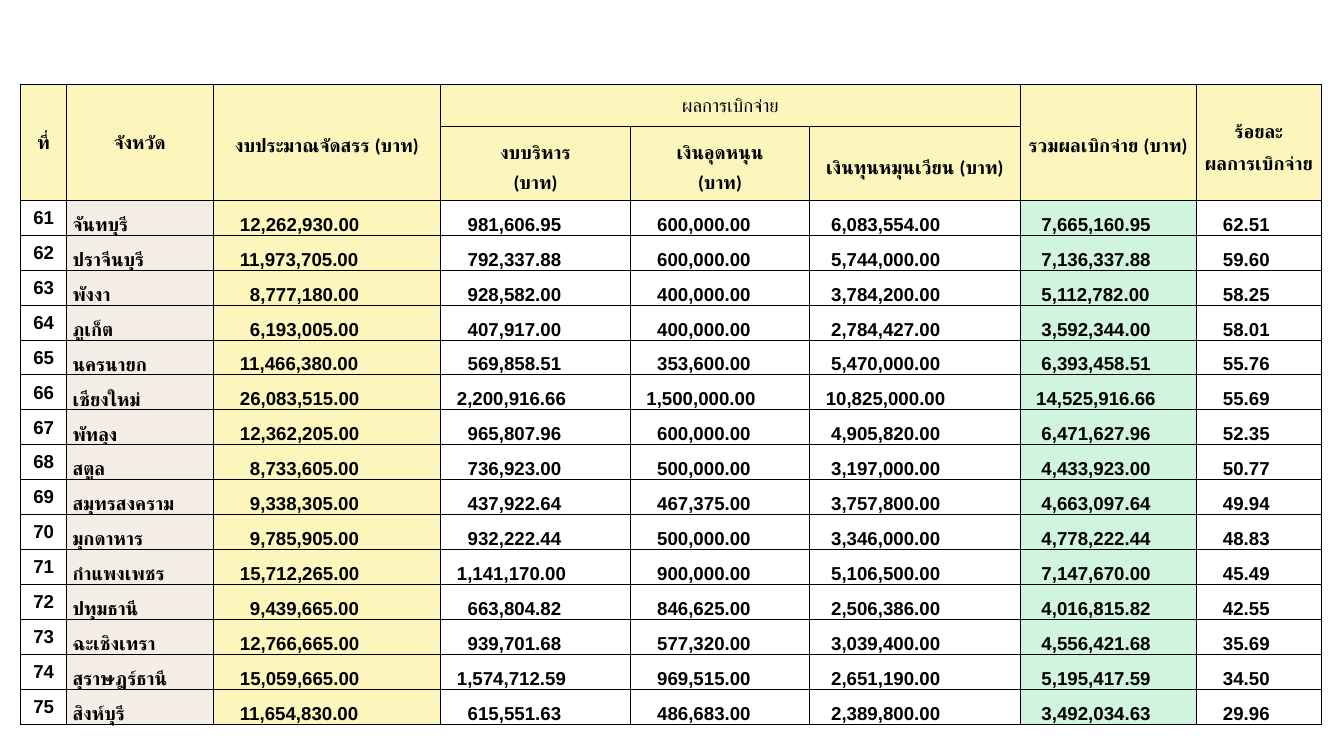
from lxml import etree
from pptx import Presentation
from pptx.dml.color import RGBColor
from pptx.enum.text import MSO_ANCHOR as Anchor, PP_ALIGN as Align
from pptx.oxml.ns import qn
from pptx.util import Inches, Pt

CREAM, SAND, MINT, BLACK = "FCF6BD", "F5EEE6", "D0F4DE", "000000"
WIDTHS = [0.68, 2.18, 3.39, 2.82, 2.67, 3.13, 2.62, 1.87]
TOPS = [0.63, 1.1]
ROW = 0.52
FIRST = 61

# Row, column, rows spanned, columns spanned, line pitch, bold, lines
HEADS = [
    (0, 0, 2, 1, 24, True, "ที่"),
    (0, 1, 2, 1, 24, True, "จังหวัด"),
    (0, 2, 2, 1, 34, True, "งบประมาณจัดสรร (บาท)"),
    (0, 3, 1, 3, 24, False, "ผลการเบิกจ่าย"),
    (0, 6, 2, 1, 34, True, "รวมผลเบิกจ่าย (บาท)"),
    (0, 7, 2, 1, 34, True, "ร้อยละ\nผลการเบิกจ่าย"),
    (1, 3, 1, 1, 34, True, "งบบริหาร\n(บาท)"),
    (1, 4, 1, 1, 34, True, "เงินอุดหนุน\n(บาท)"),
    (1, 5, 1, 1, 34, True, "เงินทุนหมุนเวียน (บาท)"),
]

# Province, budget, administration, subsidy, revolving fund, total, percent
DATA = [
    ("จันทบุรี", 12262930, 981606.95, 600000, 6083554, 7665160.95, 62.51),
    ("ปราจีนบุรี", 11973705, 792337.88, 600000, 5744000, 7136337.88, 59.60),
    ("พังงา", 8777180, 928582, 400000, 3784200, 5112782, 58.25),
    ("ภูเก็ต", 6193005, 407917, 400000, 2784427, 3592344, 58.01),
    ("นครนายก", 11466380, 569858.51, 353600, 5470000, 6393458.51, 55.76),
    ("เชียงใหม่", 26083515, 2200916.66, 1500000, 10825000, 14525916.66, 55.69),
    ("พัทลุง", 12362205, 965807.96, 600000, 4905820, 6471627.96, 52.35),
    ("สตูล", 8733605, 736923, 500000, 3197000, 4433923, 50.77),
    ("สมุทรสงคราม", 9338305, 437922.64, 467375, 3757800, 4663097.64, 49.94),
    ("มุกดาหาร", 9785905, 932222.44, 500000, 3346000, 4778222.44, 48.83),
    ("กำแพงเพชร", 15712265, 1141170, 900000, 5106500, 7147670, 45.49),
    ("ปทุมธานี", 9439665, 663804.82, 846625, 2506386, 4016815.82, 42.55),
    ("ฉะเชิงเทรา", 12766665, 939701.68, 577320, 3039400, 4556421.68, 35.69),
    ("สุราษฎร์ธานี", 15059665, 1574712.59, 969515, 2651190, 5195417.59, 34.50),
    ("สิงห์บุรี", 11654830, 615551.63, 486683, 2389800, 3492034.63, 29.96),
]
FILLS = [None, SAND, CREAM, None, None, None, MINT, None]

# Left inset of each figure column, for short and for long figures
LONG = [None, None, 13, 12, 12, 13, 13, 6]
INSETS = [None, None, (0.55, 0.4), (0.4, 0.24), (0.4, 0.24),
          (0.32, 0.24), (0.32, 0.24), (0.4, 0.4)]


def color(code):
    return RGBColor.from_string(code)


def border(cell):
    props = cell._tc.get_or_add_tcPr()
    for pos, side in enumerate(("a:lnL", "a:lnR", "a:lnT", "a:lnB")):
        line = etree.Element(qn(side), w=str(Pt(1)))
        fill = etree.SubElement(line, qn("a:solidFill"))
        etree.SubElement(fill, qn("a:srgbClr"), val=BLACK)
        props.insert(pos, line)


def paint(cell, fill):
    if fill:
        cell.fill.solid()
        cell.fill.fore_color.rgb = color(fill)
    else:
        cell.fill.background()


def write(cell, text, font, align, anchor, insets, bold=True, pitch=None):
    cell.text_frame.text = text
    cell.vertical_anchor = anchor
    (cell.margin_left, cell.margin_top,
     cell.margin_right, cell.margin_bottom) = map(Inches, insets)
    for para in cell.text_frame.paragraphs:
        para.alignment = align
        if pitch:
            para.line_spacing = Pt(pitch)
        for run in para.runs:
            run.font.name = font
            run.font.size = Pt(20)
            run.font.bold = bold
            run.font.color.rgb = color(BLACK)


def add_heads(table):
    for row, col, down, across, pitch, bold, text in HEADS:
        cell = table.cell(row, col)
        if down * across > 1:
            cell.merge(table.cell(row + down - 1, col + across - 1))
        write(cell, text, "Calibri", Align.CENTER, Anchor.MIDDLE,
              [0.05] * 4, bold, pitch)


def add_rows(table):
    for num, (name, *sums) in enumerate(DATA):
        cells = table.rows[num + len(TOPS)].cells
        write(cells[0], str(FIRST + num), "Arial", Align.CENTER,
              Anchor.MIDDLE, (0.01, 0.01, 0.01, 0))
        write(cells[1], name, "Arial", Align.LEFT, Anchor.BOTTOM,
              (0.09, 0.01, 0.01, 0))
        for col, value in enumerate(sums, 2):
            text = f"{value:,.2f}"
            left = INSETS[col][len(text) >= LONG[col]]
            write(cells[col], text, "Arial", Align.LEFT, Anchor.BOTTOM,
                  (left, 0.01, 0.01, 0))


def add_budget(slide, left, top):
    heights = TOPS + [ROW] * len(DATA)
    frame = slide.shapes.add_table(
        len(heights), len(WIDTHS), Inches(left), Inches(top),
        Inches(sum(WIDTHS)), Inches(sum(heights)))
    table = frame.table
    table.first_row = table.horz_banding = False
    for col, width in zip(table.columns, WIDTHS):
        col.width = Inches(width)
    for num, height in enumerate(heights):
        table.rows[num].height = Inches(height)
        for col, cell in enumerate(table.rows[num].cells):
            paint(cell, CREAM if num < len(TOPS) else FILLS[col])
            border(cell)
    add_heads(table)
    add_rows(table)


def main():
    deck = Presentation()
    deck.slide_width, deck.slide_height = Inches(20), Inches(11.25)
    slide = deck.slides.add_slide(deck.slide_layouts[6])
    add_budget(slide, 0.31, 1.25)
    deck.save("out.pptx")


if __name__ == "__main__":
    main()
